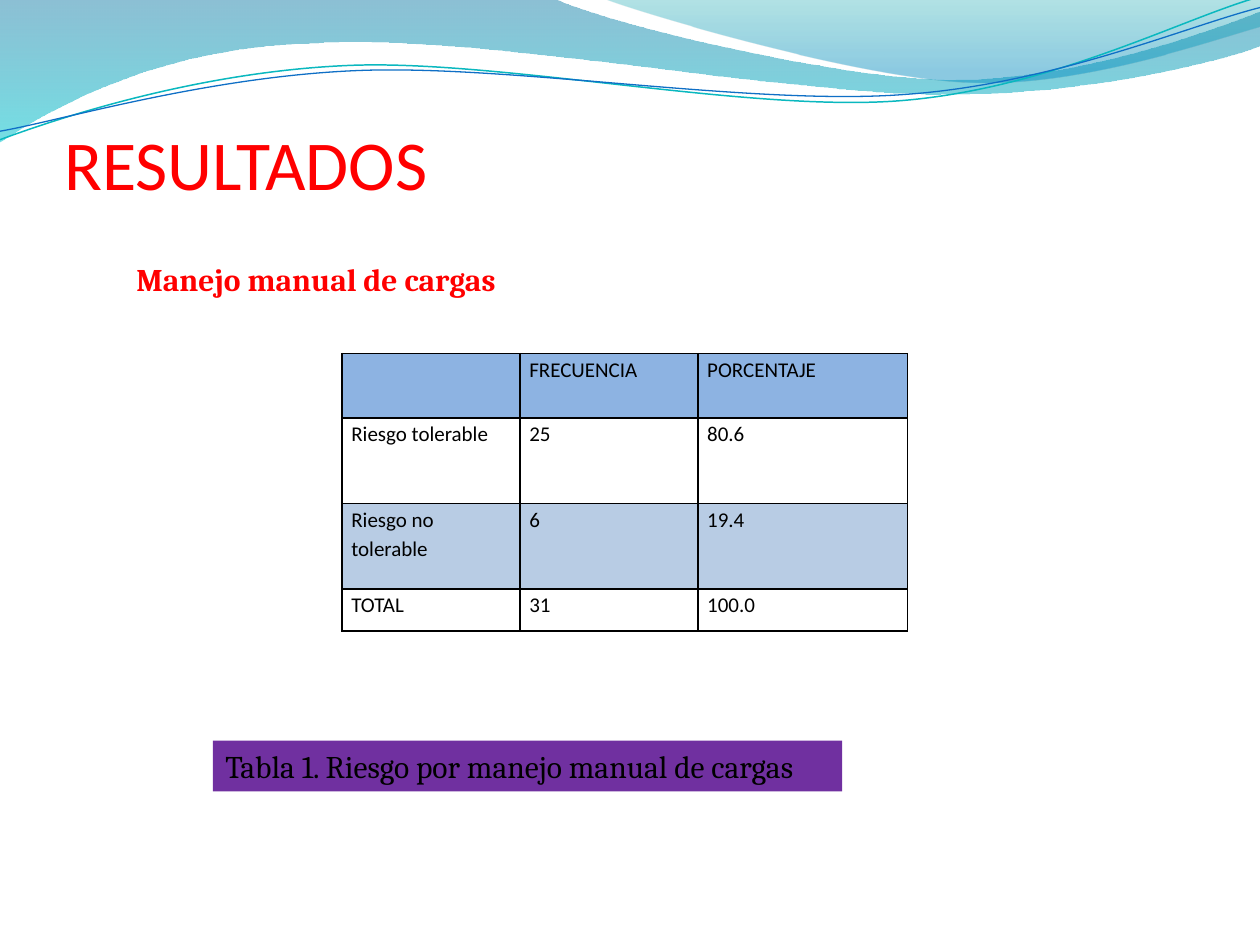
import pptx
import pptx.util
import pptx.dml.color
import pptx.enum.shapes
import pptx.enum.text
import pptx.oxml.ns
from lxml import etree
from pptx.util import Pt

THEME = {
    "red": "FF0000", "black": "000000", "white": "FFFFFF", "purple": "7030A0",
    "header": "8DB3E2", "band": "B8CCE4", "teal_line": "0AB8BF", "blue_line": "0F6FC6",
    "head": "Calibri", "body": "Cambria",
    "title_size": 40, "label_size": 18, "cell_size": 12,
}
rgb = pptx.dml.color.RGBColor.from_string
qn = pptx.oxml.ns.qn


def draw_curve(s, start, segments, close):
    """Trace lines (x, y) and cubic curves (x1, y1, x2, y2, x, y), given in points."""
    nodes = [(Pt(seg[i]), Pt(seg[i + 1])) for seg in segments for i in range(0, len(seg), 2)]
    builder = s.shapes.build_freeform(Pt(start[0]), Pt(start[1]))
    builder.add_line_segments(nodes, close=close)
    sp = builder.convert_to_shape()
    sp.shadow.inherit = False
    # Join each three nodes of a curve into one cubic segment
    lines = iter(list(sp.element.spPr.iter(qn("a:lnTo"))))
    for seg in segments:
        line = next(lines)
        if len(seg) == 6:
            curve = etree.Element(qn("a:cubicBezTo"))
            line.addprevious(curve)
            for part in (line, next(lines), next(lines)):
                curve.append(part[0])
                part.getparent().remove(part)
    return sp


def write(tf, text, font, size, color, bold=False, spacing=None):
    p = tf.paragraphs[0]
    p.alignment = pptx.enum.text.PP_ALIGN.LEFT
    p.line_spacing = spacing
    r = p.add_run()
    r.text = text
    r.font.name, r.font.size, r.font.bold = font, Pt(size), bold
    r.font.color.rgb = rgb(color)


prs = pptx.Presentation()
prs.slide_width, prs.slide_height = Pt(720), Pt(540)
s = prs.slides.add_slide(prs.slide_layouts[6])

# Waves: start, segments, gradient stops (position, colour, opacity in percent)
waves = [
    ((0, 0),
     [(316.8, -0.7), (342.7, 12.2, 478, 45.4, 545.8, 45.4),
      (614.2, 45.4, 689.8, 18.7, 720, 6.5), (720.7, 25.9),
      (707.8, 31.7, 626.4, 54.7, 537.1, 54), (447.8, 54, 275, 20.2, 185, 24.5),
      (92.9, 25.9, 33.1, 59.8, -0.7, 81.4)],
     [(0, "0074A1", 45), (1, "00C6CF", 55)]),
    ((344.9, -0.7),
     [(366.5, 7.9, 491, 44.6, 553.7, 46.8), (616.3, 49.7, 691.9, 23, 720, 15.1), (720, 0)],
     [(0, "00A1A9", 30), (0.8, "008BBF", 45)]),
]
for start, segments, stops in waves:
    sp = draw_curve(s, start, segments, True)
    sp.line.fill.background()
    sp.fill.gradient()
    sp.fill.gradient_angle = 270
    for stop, (position, color, opacity) in zip(sp.fill.gradient_stops, stops):
        stop.position = position
        stop.color.rgb = rgb(color)
    for clr, (_, _, opacity) in zip(sp.element.spPr.iter(qn("a:srgbClr")), stops):
        etree.SubElement(clr, qn("a:alpha"), val=str(opacity * 1000))

# Strands: start, segments, colour, line width, all before the common tilt
strands = [
    ((-1.4, 62.9),
     [(33.8, 51.7, 114.1, 29.4, 199.8, 29.9), (284.9, 30.3, 425.8, 67.3, 512.4, 64.9),
      (599, 62.4, 676.5, 25.7, 720.2, 15.5)], THEME["teal_line"], 0.85),
    ((-1.1, 58),
     [(32.9, 53.8, 118.3, 32.5, 204.1, 33), (290.6, 33.4, 428.9, 63.8, 515.5, 61.4),
      (601.3, 59.6, 678.4, 30.1, 721.4, 21.3)], THEME["blue_line"], 0.75),
]
for start, segments, color, width in strands:
    sp = draw_curve(s, start, segments, False)
    sp.rotation = 357.3
    sp.fill.background()
    sp.line.color.rgb = rgb(color)
    sp.line.width = Pt(width)

# Title
tf = s.shapes.add_textbox(Pt(36.7), Pt(48.6), Pt(233.3), Pt(68.2)).text_frame
tf.word_wrap = True
tf.vertical_anchor = pptx.enum.text.MSO_ANCHOR.BOTTOM
tf.margin_left = tf.margin_right = tf.margin_bottom = 0
tf.margin_top = Pt(3.6)
write(tf, "RESULTADOS", THEME["head"], THEME["title_size"], THEME["red"])

# Frequency table
rows = [
    (36.9, THEME["header"], ("", "FRECUENCIA", "PORCENTAJE")),
    (48.9, None, ("Riesgo tolerable", "25", "80.6")),
    (48.7, THEME["band"], ("Riesgo no tolerable", "6", "19.4")),
    (24.2, THEME["white"], ("TOTAL", "31", "100.0")),
]
widths = (101.7, 101.7, 119.7)
table = s.shapes.add_table(len(rows), len(widths), Pt(195.4), Pt(202),
                           Pt(sum(widths)), Pt(sum(row[0] for row in rows))).table
table.first_row = table.horz_banding = False
for column, width in zip(table.columns, widths):
    column.width = Pt(width)
for i, (height, fill, texts) in enumerate(rows):
    table.rows[i].height = Pt(height)
    for cell, text in zip(table.rows[i].cells, texts):
        cell.margin_left = cell.margin_right = Pt(5.4)
        cell.margin_top = cell.margin_bottom = 0
        if text:
            write(cell.text_frame, text, THEME["head"], THEME["cell_size"],
                  THEME["black"], spacing=1.15)
        tcPr = cell._tc.get_or_add_tcPr()
        for side in ("a:lnL", "a:lnR", "a:lnT", "a:lnB"):
            ln = etree.SubElement(tcPr, qn(side), w=str(Pt(1)))
            solid = etree.SubElement(ln, qn("a:solidFill"))
            etree.SubElement(solid, qn("a:srgbClr"), val=THEME["black"])
        if fill:
            cell.fill.solid()
            cell.fill.fore_color.rgb = rgb(fill)
        else:
            cell.fill.background()

# Caption and subtitle
labels = [
    ("Tabla 1. Riesgo por manejo manual de cargas", (121.7, 423.2, 359.6, 29),
     THEME["purple"], THEME["black"], False),
    ("Manejo manual de cargas", (70.8, 145.1, 231, 29),
     THEME["white"], THEME["red"], True),
]
for text, box, fill, color, bold in labels:
    sp = s.shapes.add_shape(pptx.enum.shapes.MSO_SHAPE.RECTANGLE, *map(Pt, box))
    sp.shadow.inherit = False
    sp.fill.solid()
    sp.fill.fore_color.rgb = rgb(fill)
    sp.line.fill.background()
    tf = sp.text_frame
    tf.word_wrap = False
    tf.auto_size = pptx.enum.text.MSO_AUTO_SIZE.SHAPE_TO_FIT_TEXT
    tf.vertical_anchor = pptx.enum.text.MSO_ANCHOR.TOP
    write(tf, text, THEME["body"], THEME["label_size"], color, bold=bold)

prs.save("out.pptx")
